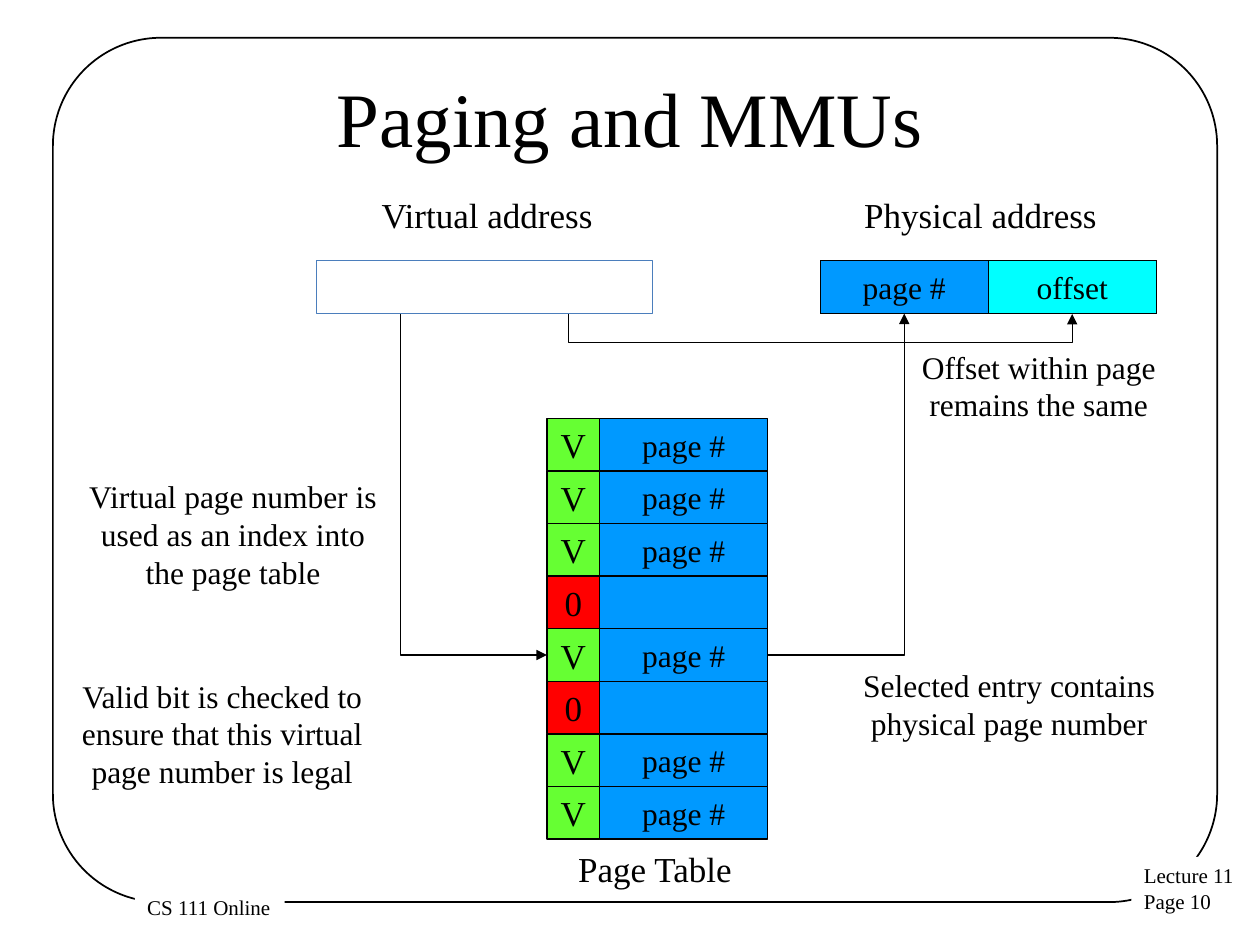
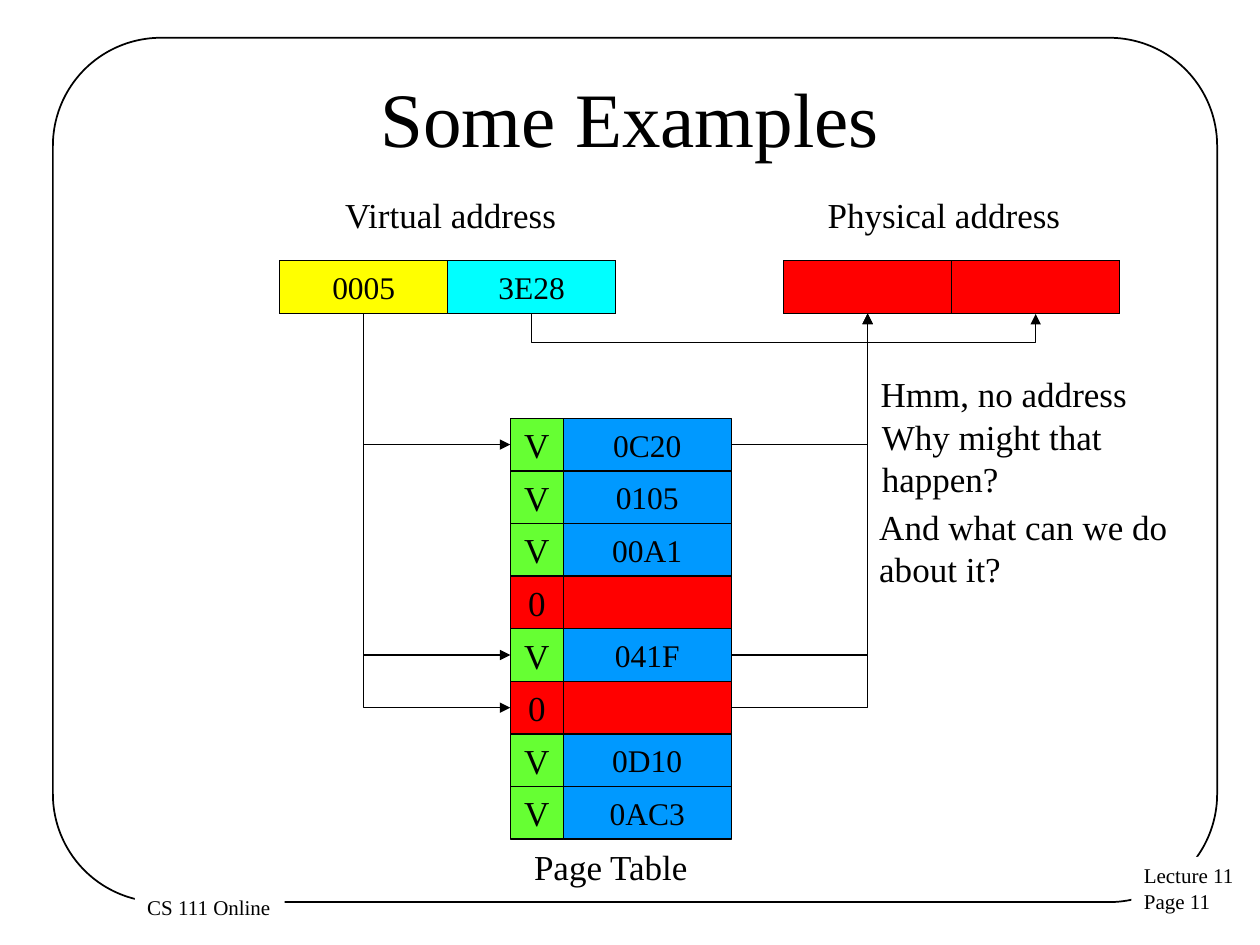
from lxml.etree import SubElement
from pptx import Presentation
from pptx.dml.color import RGBColor
from pptx.enum.shapes import MSO_CONNECTOR, MSO_SHAPE
from pptx.enum.text import MSO_ANCHOR, MSO_AUTO_SIZE, PP_ALIGN
from pptx.oxml.ns import qn
from pptx.util import Inches, Pt

BLACK = RGBColor(0x00, 0x00, 0x00)
WHITE = RGBColor(0xFF, 0xFF, 0xFF)
YELLOW = RGBColor(0xFF, 0xFF, 0x00)
CYAN = RGBColor(0x00, 0xFF, 0xFF)
BLUE = RGBColor(0x00, 0x99, 0xFF)
GREEN = RGBColor(0x66, 0xFF, 0x33)
RED = RGBColor(0xFF, 0x00, 0x00)
STEEL = RGBColor(0x4B, 0x7E, 0xBC)

FONT = "Times New Roman"

# Shared diagram grid, in inches; horizontal places count from the virtual address
ADDRESS_TOP, ADDRESS_HEIGHT = 2.07, 0.42
ADDRESS_BOTTOM = ADDRESS_TOP + ADDRESS_HEIGHT
FIELD_WIDTH = 4 / 3
PHYSICAL_SHIFT = 4
TABLE_TOP = 3.32
ROW_HEIGHT = 3.34 / 8
BIT_SHIFT, BIT_WIDTH = 1.83, 0.42
ENTRY_SHIFT = BIT_SHIFT + BIT_WIDTH
OFFSET_DROP = 0.25


class SlideBuilder:
    """Holds the presentation style and the current slide."""

    def __init__(self):
        self.deck = Presentation()
        self.deck.slide_width = Inches(10)
        self.deck.slide_height = Inches(7.5)
        self.page = None

    def new_page(self, title, number):
        self.page = self.deck.slides.add_slide(self.deck.slide_layouts[6])
        frame = self.rectangle(0.42, 0.3, 9.24, 6.86, line=BLACK, weight=1,
                               kind=MSO_SHAPE.ROUNDED_RECTANGLE)
        frame.adjustments[0] = 0.125
        self.footer(8.98, 6.8, 0.92, 0.51, f"Lecture 11\nPage {number}")
        self.footer(1.07, 7.05, 1.19, 0.3, "CS 111 Online")
        box = self.text(0.5, 0.3, 9, 1.25, title, 44, PP_ALIGN.CENTER, wrap=True)
        box.text_frame.auto_size = MSO_AUTO_SIZE.NONE
        box.text_frame.vertical_anchor = MSO_ANCHOR.MIDDLE

    def set_text(self, shape, text, size, align, wrap=False):
        text_frame = shape.text_frame
        text_frame.text = text
        text_frame.word_wrap = wrap
        for para in text_frame.paragraphs:
            para.alignment = align
            for span in para.runs:
                span.font.name = FONT
                span.font.size = Pt(size)
                span.font.color.rgb = BLACK

    def rectangle(self, left, top, width, height, fill=None, line=None,
                  weight=0.75, kind=MSO_SHAPE.RECTANGLE):
        shape = self.page.shapes.add_shape(
            kind, Inches(left), Inches(top), Inches(width), Inches(height))
        shape.shadow.inherit = False
        if fill is None:
            shape.fill.background()
        else:
            shape.fill.solid()
            shape.fill.fore_color.rgb = fill
        if line is None:
            shape.line.fill.background()
        else:
            shape.line.color.rgb = line
            shape.line.width = Pt(weight)
        return shape

    def footer(self, left, top, width, height, text):
        shape = self.rectangle(left, top, width, height, fill=WHITE)
        self.set_text(shape, text, 12, PP_ALIGN.LEFT)
        shape.text_frame.vertical_anchor = MSO_ANCHOR.TOP
        shape.text_frame.auto_size = MSO_AUTO_SIZE.SHAPE_TO_FIT_TEXT

    def cell(self, left, top, width, height, text, fill, size=18):
        shape = self.rectangle(left, top, width, height, fill, BLACK)
        if text:
            self.set_text(shape, text, size, PP_ALIGN.CENTER)
            shape.text_frame.vertical_anchor = MSO_ANCHOR.MIDDLE

    def text(self, left, top, width, height, text, size=20,
             align=PP_ALIGN.LEFT, wrap=False):
        box = self.page.shapes.add_textbox(
            Inches(left), Inches(top), Inches(width), Inches(height))
        self.set_text(box, text, size, align, wrap)
        box.text_frame.auto_size = MSO_AUTO_SIZE.SHAPE_TO_FIT_TEXT
        return box

    def note(self, left, top, width, height, text):
        self.text(left, top, width, height, text, 18, PP_ALIGN.CENTER, wrap=True)

    def elbow(self, x1, y1, x2, y2, preset="bentConnector2", downward=False, bend=None):
        """Draw a bent arrow; a downward one leaves its start vertically."""
        if downward:  # laid out sideways around its centre, then turned
            x, y = (x1 + x2) / 2, (y1 + y2) / 2
            half_width, half_height = (y2 - y1) / 2, (x2 - x1) / 2
            x1, x2 = x - half_width, x + half_width
            y1, y2 = y - half_height, y + half_height
        arrow = self.page.shapes.add_connector(
            MSO_CONNECTOR.ELBOW, Inches(x1), Inches(y1), Inches(x2), Inches(y2))
        arrow.line.color.rgb = BLACK
        arrow.line.width = Pt(0.75)
        properties = arrow._element.spPr
        if downward:
            transform = properties.find(qn("a:xfrm"))
            transform.set("rot", str(270 * 60000))
            transform.set("flipH", "1")
        geometry = properties.find(qn("a:prstGeom"))
        geometry.set("prst", preset)
        if bend is not None:
            guide = SubElement(geometry.find(qn("a:avLst")), qn("a:gd"))
            guide.set("name", "adj1")
            guide.set("fmla", f"val {bend * 100000}")
        SubElement(properties.find(qn("a:ln")), qn("a:tailEnd")).set("type", "triangle")
        SubElement(properties, qn("a:effectLst"))

    def address(self, left, fields):
        for index, (text, fill) in enumerate(fields):
            self.cell(left + index * FIELD_WIDTH, ADDRESS_TOP, FIELD_WIDTH,
                      ADDRESS_HEIGHT, text, fill)
        self.rectangle(left, ADDRESS_TOP, 2 * FIELD_WIDTH, ADDRESS_HEIGHT, line=BLACK)

    def page_table(self, left, entries, invalid_fill):
        for row, entry in enumerate(entries):
            top = TABLE_TOP + row * ROW_HEIGHT
            bit, bit_fill, fill = ("V", GREEN, BLUE) if entry else ("0", RED, invalid_fill)
            self.cell(left + ENTRY_SHIFT, top, FIELD_WIDTH, ROW_HEIGHT, entry, fill)
            self.cell(left + BIT_SHIFT, top, BIT_WIDTH, ROW_HEIGHT, bit, bit_fill, 20)

    def headings(self, left):
        self.text(left + 0.42, 1.49, 1.9, 0.44, "Virtual address")
        self.text(left + 4.25, 1.49, 2.06, 0.44, "Physical address")

    def lookups(self, left, rows):
        # Page number in, page number out
        page_x = left + FIELD_WIDTH / 2
        for row in rows:
            middle = TABLE_TOP + (row + 0.5) * ROW_HEIGHT
            self.elbow(page_x, ADDRESS_BOTTOM, left + BIT_SHIFT, middle, downward=True)
            self.elbow(left + ENTRY_SHIFT + FIELD_WIDTH, middle,
                       page_x + PHYSICAL_SHIFT, ADDRESS_BOTTOM)
        # Offset carried over; the bend is a multiple of the tiny end-to-end drop
        offset_x = page_x + FIELD_WIDTH
        bend = 144
        self.elbow(offset_x, ADDRESS_BOTTOM, offset_x + PHYSICAL_SHIFT,
                   ADDRESS_BOTTOM + OFFSET_DROP / bend,
                   "bentConnector3", downward=True, bend=bend)


def paging_page(builder):
    left = 2.51
    builder.new_page("Paging and MMUs", 10)
    builder.headings(left)
    builder.address(left + PHYSICAL_SHIFT, [("page #", BLUE), ("offset", CYAN)])
    valid = "page #"
    builder.page_table(left, [valid, valid, valid, "", valid, "", valid, valid], BLUE)
    builder.text(4.49, 6.68, 1.44, 0.44, "Page Table")
    builder.lookups(left, [4])
    builder.rectangle(left, ADDRESS_TOP, 2 * FIELD_WIDTH, ADDRESS_HEIGHT, WHITE, STEEL)

    # Explanations around the diagram
    builder.note(0.6, 3.74, 2.5, 1.01,
                 "Virtual page number is used as an index into the page table")
    builder.note(6.68, 5.24, 2.66, 0.71, "Selected entry contains physical page number")
    builder.note(6.91, 2.71, 2.67, 0.71, "Offset within page remains the same")
    builder.note(0.43, 5.32, 2.67, 1.01,
                 "Valid bit is checked to ensure that this virtual page number is legal")


def examples_page(builder):
    left = 2.22
    builder.new_page("Some Examples", 11)
    builder.headings(left)
    builder.address(left, [("0005", YELLOW), ("3E28", CYAN)])
    builder.address(left + PHYSICAL_SHIFT, [("", RED), ("", RED)])
    builder.page_table(
        left, ["0C20", "0105", "00A1", "", "041F", "", "0D10", "0AC3"], RED)
    builder.text(4.14, 6.66, 1.44, 0.44, "Page Table")
    builder.lookups(left, [4, 0, 5])

    # Questions about the failed lookup
    builder.text(6.89, 2.91, 2.17, 0.44, "Hmm, no address")
    builder.text(6.9, 3.25, 2.6, 0.77, "Why might that happen?", wrap=True)
    builder.text(6.88, 3.96, 2.6, 0.77, "And what can we do about it?", wrap=True)


def main():
    builder = SlideBuilder()
    paging_page(builder)
    examples_page(builder)
    builder.deck.save("out.pptx")


if __name__ == "__main__":
    main()
